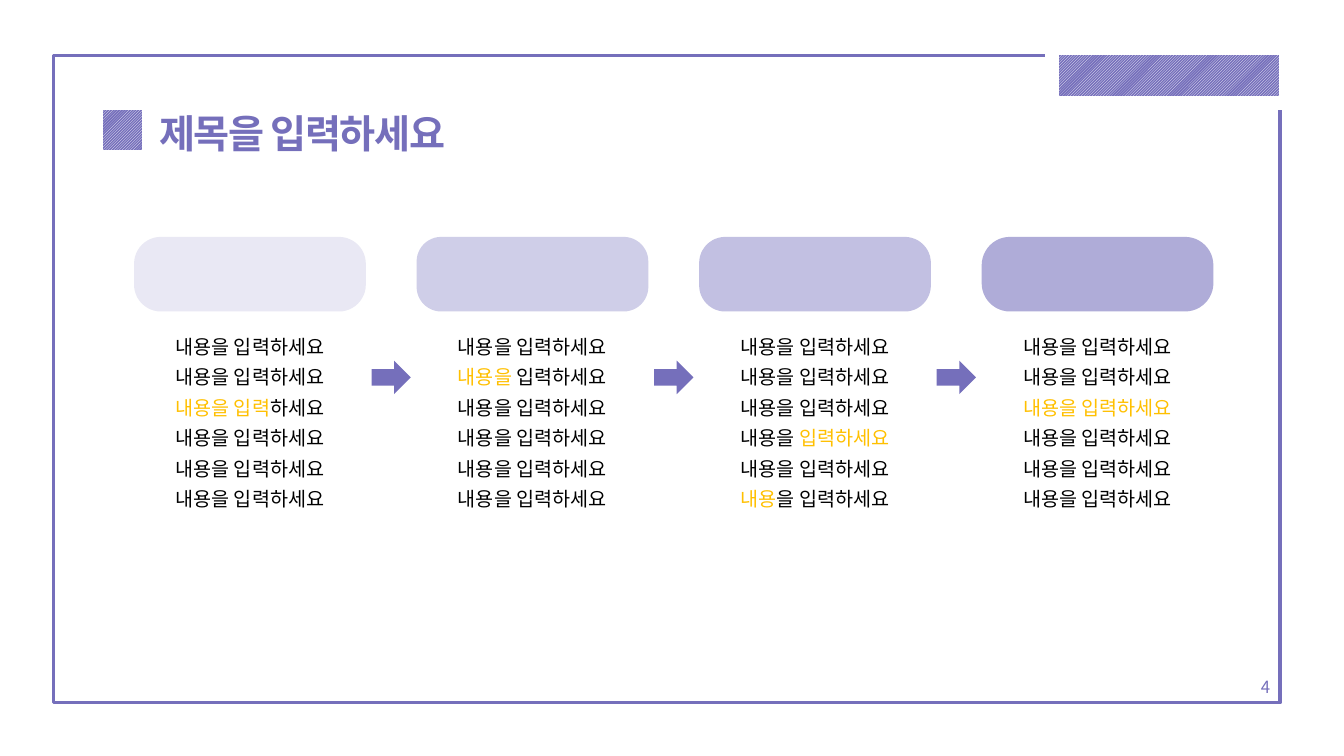
from lxml.etree import SubElement
from pptx import Presentation
from pptx.dml.color import RGBColor
from pptx.enum.dml import MSO_PATTERN
from pptx.enum.shapes import MSO_SHAPE
from pptx.enum.text import MSO_ANCHOR, PP_ALIGN
from pptx.oxml.ns import qn
from pptx.util import Cm, Pt

FONT = "Noto Sans CJK KR"
PURPLE, WHITE, BLACK, GOLD = "756FBB", "FFFFFF", "000000", "FFC000"
TITLE = "제목을 입력하세요"
PAGE_NUMBER = "4"
LINE = "내용을 입력하세요"
LINE_COUNT = 6
STEPS = [
    {"fill": "E9E8F4", "corner": 0.36, "highlights": {2: "내용을 입력"}},
    {"fill": "CFCEE8", "corner": 0.33, "highlights": {1: "내용을"}},
    {"fill": "C2C0E2", "corner": 0.35, "highlights": {3: "입력하세요", 5: "내용"}},
    {"fill": "AFACD8", "corner": 0.38, "highlights": {2: LINE}},
]
HATCHED_BLOCKS = [(26.52, 1.22, 5.89, 1.37), (2.41, 2.59, 1.35, 1.37)]
STEP_LEFT, STEP_PITCH, STEP_WIDTH = 3.38, 7.12, 5.84
BOX_TOP, BOX_HEIGHT = 5.97, 1.88
TEXT_TOP, TEXT_HEIGHT = 8.13, 4.93
ARROW_TOP, ARROW_WIDTH, ARROW_HEIGHT = 9.09, 0.99, 0.84


def color(value):
    return RGBColor.from_string(value)


def lengths(*values):
    return [Cm(value) for value in values]


def add_block(slide, kind, place, fill=None):
    shape = slide.shapes.add_shape(kind, *lengths(*place))
    shape.shadow.inherit = False
    shape.line.fill.background()
    if fill:
        shape.fill.solid()
        shape.fill.fore_color.rgb = color(fill)
    else:
        shape.fill.background()
    return shape


def outline(shape, value, width):
    shape.line.color.rgb = color(value)
    shape.line.width = Pt(width)


def add_run(paragraph, text, size, value):
    run = paragraph.add_run()
    run.text = text
    run.font.size = Pt(size)
    run.font.name = FONT
    run.font.color.rgb = color(value)
    SubElement(run.font._element, qn("a:ea")).set("typeface", FONT)
    return run


def add_text_box(slide, place):
    frame = slide.shapes.add_textbox(*lengths(*place)).text_frame
    frame.word_wrap = True
    return frame


def add_frame(slide):
    border = add_block(slide, MSO_SHAPE.RECTANGLE, (1.35, 1.4, 30.91, 16.31))
    outline(border, PURPLE, 2.5)
    for place in HATCHED_BLOCKS:
        block = add_block(slide, MSO_SHAPE.RECTANGLE, place)
        block.fill.patterned()
        block.fill.pattern = MSO_PATTERN.DARK_UPWARD_DIAGONAL
        block.fill.fore_color.rgb = color(WHITE)
        block.fill.back_color.rgb = color(PURPLE)
        outline(block, WHITE, 10)


def add_title(slide):
    title = slide.shapes.title
    title.left, title.top, title.width, title.height = lengths(3.76, 2.62, 8, 1.45)
    frame = title.text_frame
    frame.word_wrap = False
    frame.vertical_anchor = MSO_ANCHOR.MIDDLE
    paragraph = frame.paragraphs[0]
    paragraph.alignment = PP_ALIGN.LEFT
    run = add_run(paragraph, TITLE, 28, PURPLE)
    run.font.bold = True
    run.font._element.set("spc", "-100")


def add_step_text(slide, left, highlights):
    frame = add_text_box(slide, (left, TEXT_TOP, STEP_WIDTH, TEXT_HEIGHT))
    for index in range(LINE_COUNT):
        paragraph = frame.paragraphs[0] if index == 0 else frame.add_paragraph()
        paragraph.alignment = PP_ALIGN.CENTER
        paragraph.line_spacing = 1.3
        highlight = highlights.get(index, "")
        before, after = LINE.split(highlight) if highlight else (LINE, "")
        for text, value in ((before, BLACK), (highlight, GOLD), (after, BLACK)):
            if text:
                add_run(paragraph, text, 14, value)


def add_steps(slide):
    arrow_offset = (STEP_PITCH + STEP_WIDTH - ARROW_WIDTH) / 2
    for index, step in enumerate(STEPS):
        left = STEP_LEFT + index * STEP_PITCH
        box = add_block(slide, MSO_SHAPE.ROUNDED_RECTANGLE,
                        (left, BOX_TOP, STEP_WIDTH, BOX_HEIGHT), step["fill"])
        box.adjustments[0] = step["corner"]
        add_step_text(slide, left, step["highlights"])
        if index < len(STEPS) - 1:
            add_block(slide, MSO_SHAPE.RIGHT_ARROW,
                      (left + arrow_offset, ARROW_TOP, ARROW_WIDTH, ARROW_HEIGHT), PURPLE)


def add_page_number(slide):
    frame = add_text_box(slide, (31.04, 16.79, 1.22, 1.02))
    frame.vertical_anchor = MSO_ANCHOR.MIDDLE
    paragraph = frame.paragraphs[0]
    paragraph.alignment = PP_ALIGN.RIGHT
    add_run(paragraph, PAGE_NUMBER, 12, PURPLE)


def main():
    presentation = Presentation()
    presentation.slide_width, presentation.slide_height = lengths(33.87, 19.05)
    slide = presentation.slides.add_slide(presentation.slide_layouts[5])
    add_frame(slide)
    add_title(slide)
    add_steps(slide)
    add_page_number(slide)
    presentation.save("out.pptx")


if __name__ == "__main__":
    main()
